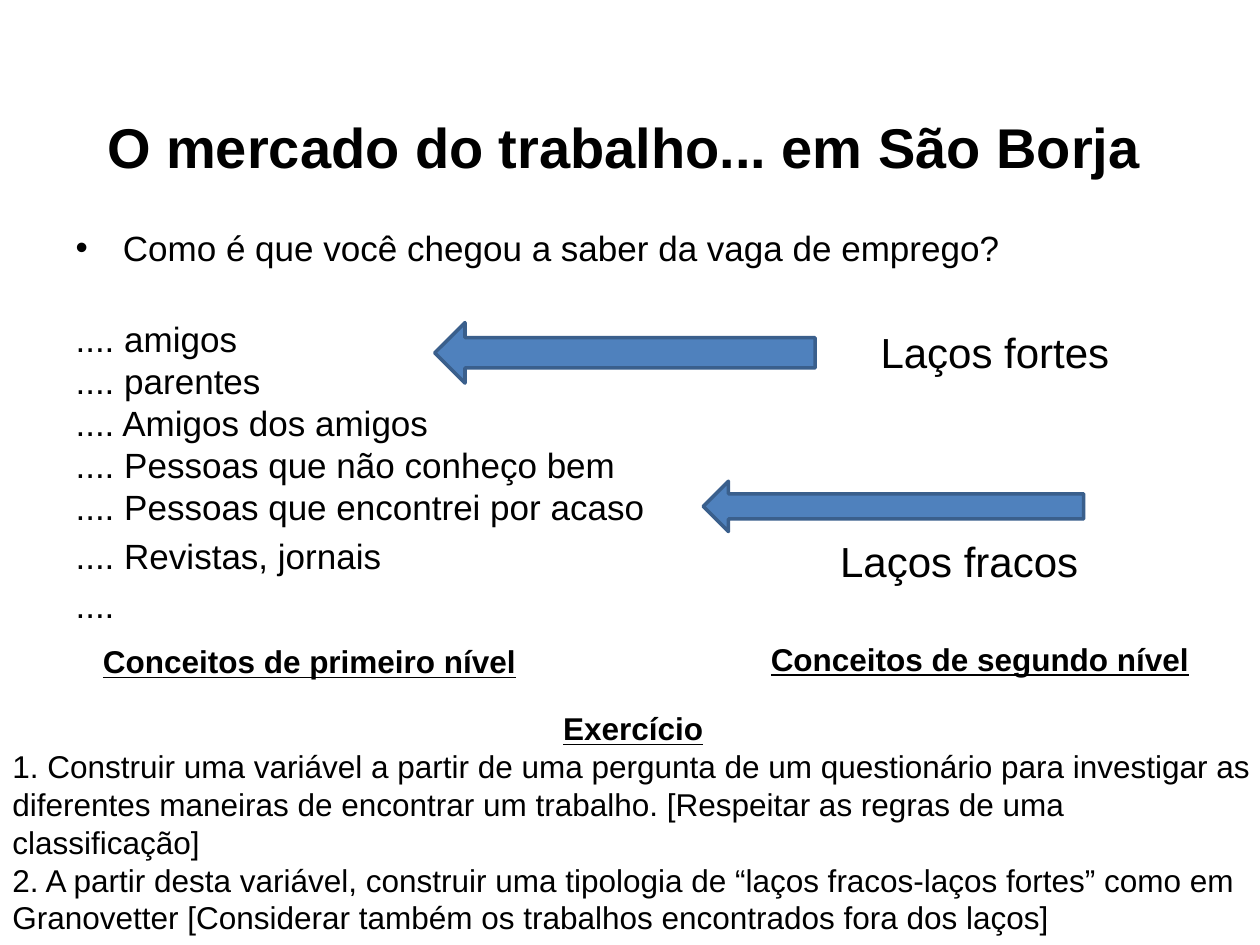
from pptx import Presentation
from pptx.dml.color import RGBColor
from pptx.enum.shapes import MSO_SHAPE as Shape
from pptx.enum.text import MSO_ANCHOR as Anchor, MSO_AUTO_SIZE as AutoSize, PP_ALIGN as Align
from pptx.oxml.xmlchemy import OxmlElement
from pptx.util import Pt

THEME = {
    "font": "Arial",
    "text": RGBColor(0, 0, 0),
    "fill": RGBColor(0x4F, 0x81, 0xBD),
    "line": RGBColor(0x3A, 0x5F, 0x8C),
    "title": 32, "body": 20, "tie": 24, "note": 18,
}

TITLE = "O mercado do trabalho... em São Borja"
TITLE_AREA = (25.2, 38.2, 663.1, 90)
BODY_AREA = (36, 126, 648, 252)
QUESTION = "Como é que você chegou a saber da vaga de emprego?"
ANSWERS = [
    (".... amigos", 28),
    (".... parentes", 0),
    (".... Amigos dos amigos", 0),
    (".... Pessoas que não conheço bem", 0),
    (".... Pessoas que encontrei por acaso", 0),
    (".... Revistas, jornais", 4),
    ("....", 4),
]
HEADING = {"size": THEME["note"], "bold": True, "underline": True}
LABELS = [
    ("Laços fortes", (496.1, 182.9, 169.9, 36.7), {"size": THEME["tie"]}),
    ("Laços fracos", (473, 302.4, 186.5, 36), {"size": THEME["tie"]}),
    ("Conceitos de primeiro nível", (51.8, 363.6, 254.9, 28.8), HEADING),
    ("Conceitos de segundo nível", (433.4, 362.2, 254.9, 28.8), HEADING),
]
ARROWS = [(339.8, 92.9, 34.6, 217.4), (496.1, 180.7, 28.8, 217.4)]
EXERCISE_AREA = (0, 401.8, 723.6, 138.2)
EXERCISE = [
    "1. Construir uma variável a partir de uma pergunta de um questionário para investigar as "
    "diferentes maneiras de encontrar um trabalho. [Respeitar as regras de uma classificação]",
    "2. A partir desta variável, construir uma tipologia de “laços fracos-laços fortes” como em "
    "Granovetter [Considerar também os trabalhos encontrados fora dos laços]",
]


def place(shape, area):
    shape.left, shape.top, shape.width, shape.height = map(Pt, area)


def write(frame, text, size, bold=False, underline=False, align=Align.LEFT, before=0, first=False):
    para = frame.paragraphs[0] if first else frame.add_paragraph()
    para.alignment = align
    para.space_before = Pt(before)
    span = para.add_run()
    span.text = text
    font = span.font
    font.name, font.size = THEME["font"], Pt(size)
    font.bold, font.underline = bold, underline
    font.color.rgb = THEME["text"]
    return para


def remove_bullet(para):
    properties = para._p.get_or_add_pPr()
    properties.set("marL", "0")
    properties.set("indent", "0")
    properties.append(OxmlElement("a:buNone"))


def add_box(page, area):
    box = page.shapes.add_textbox(*map(Pt, area))
    box.text_frame.word_wrap = True
    return box.text_frame


def add_arrow(page, area):
    arrow = page.shapes.add_shape(Shape.DOWN_ARROW, *map(Pt, area))
    arrow.rotation = 90
    arrow.shadow.inherit = False
    arrow.fill.solid()
    arrow.fill.fore_color.rgb = THEME["fill"]
    arrow.line.color.rgb = THEME["line"]
    arrow.line.width = Pt(2)


def main():
    deck = Presentation()
    deck.slide_width, deck.slide_height = Pt(720), Pt(540)
    page = deck.slides.add_slide(deck.slide_layouts[1])

    title, body = page.shapes.title, page.placeholders[1]
    for holder, area in ((title, TITLE_AREA), (body, BODY_AREA)):
        place(holder, area)
        holder.text_frame.auto_size = AutoSize.NONE
    title.text_frame.vertical_anchor = Anchor.MIDDLE
    write(title.text_frame, TITLE, THEME["title"], bold=True, align=Align.CENTER, first=True)

    write(body.text_frame, QUESTION, THEME["body"], before=4, first=True)
    for text, before in ANSWERS:
        remove_bullet(write(body.text_frame, text, THEME["body"], before=before))

    for area in ARROWS:
        add_arrow(page, area)
    for text, area, style in LABELS:
        write(add_box(page, area), text, first=True, **style)

    exercise = add_box(page, EXERCISE_AREA)
    write(exercise, "Exercício", align=Align.CENTER, first=True, **HEADING)
    for text in EXERCISE:
        write(exercise, text, THEME["note"])

    deck.save("out.pptx")


if __name__ == "__main__":
    main()
